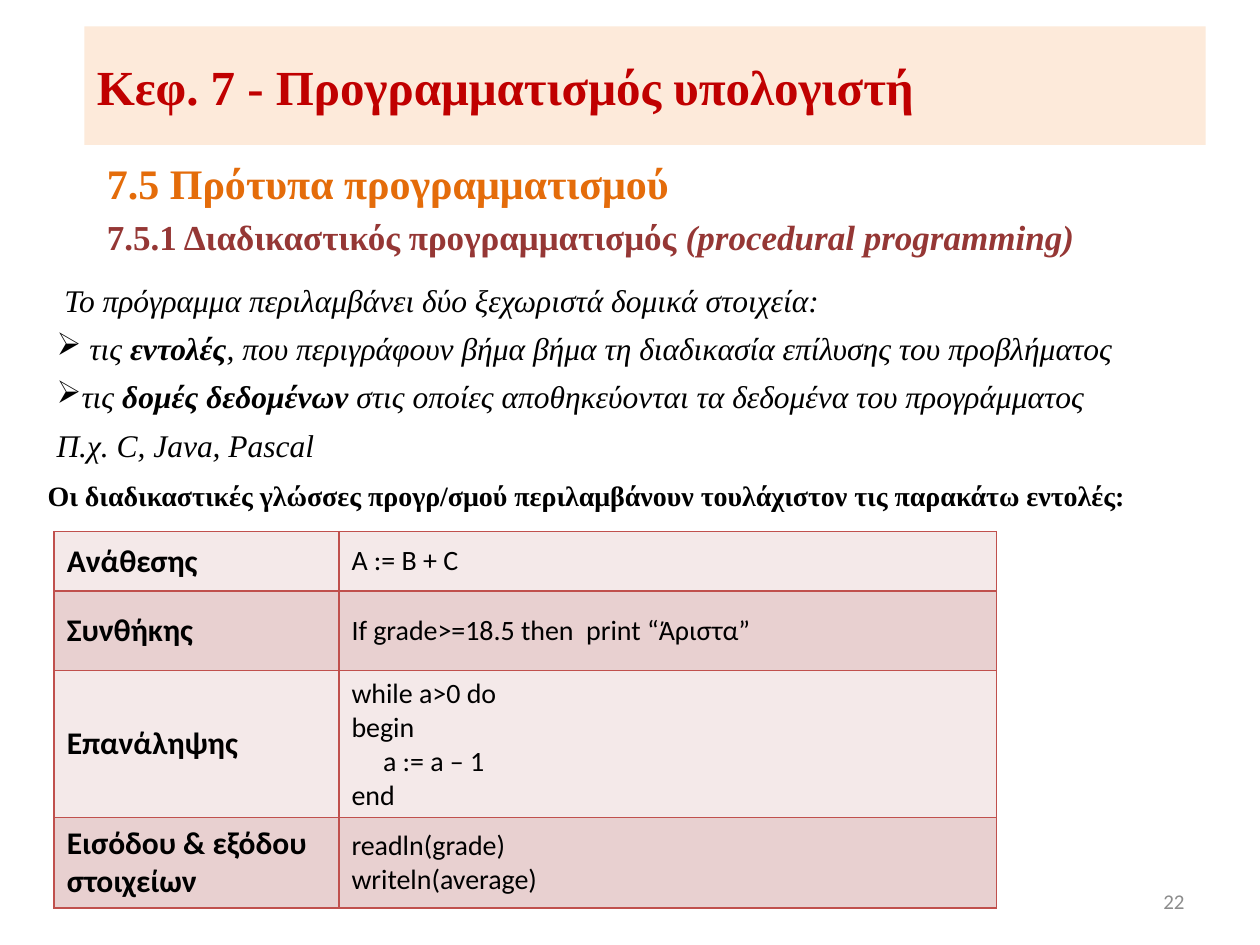
from dataclasses import dataclass

from lxml.etree import SubElement
from pptx import Presentation
from pptx.dml.color import RGBColor
from pptx.enum.shapes import MSO_SHAPE
from pptx.enum.text import MSO_ANCHOR, PP_ALIGN
from pptx.oxml.ns import qn
from pptx.util import Inches, Pt


@dataclass(frozen=True)
class Theme:
    serif: str = "Times New Roman"
    sans: str = "Calibri"
    black: str = "000000"
    title: str = "C00000"
    title_fill: str = "FDEADA"
    section: str = "E46C0A"
    subsection: str = "953735"
    number: str = "8C8C8C"
    border: str = "C0504D"
    bands: tuple = ("F4E9E9", "E8D0D0")
    title_size: int = 28
    section_size: int = 24
    subsection_size: int = 20
    body_size: int = 18
    code_size: int = 16
    number_size: int = 12


@dataclass(frozen=True)
class Span:
    text: str
    bold: bool = False
    italic: bool = False


@dataclass(frozen=True)
class Para:
    spans: tuple
    bullet: str = ""


@dataclass(frozen=True)
class Style:
    size: int
    color: str
    font: str
    after: int = 0
    align: PP_ALIGN = PP_ALIGN.LEFT


@dataclass(frozen=True)
class Block:
    area: tuple  # left, top, width, height in inches
    paras: tuple
    style: Style
    anchor: MSO_ANCHOR = MSO_ANCHOR.TOP
    top_inset: float = 0.05


@dataclass(frozen=True)
class Command:
    name: str
    code: tuple
    height: float


THEME = Theme()


def write(frame, paras: tuple, style: Style) -> None:
    frame.word_wrap = True
    for index, item in enumerate(paras):
        para = frame.paragraphs[0] if index == 0 else frame.add_paragraph()
        para.alignment = style.align
        para.space_after = Pt(style.after)
        if item.bullet:
            SubElement(para._p.get_or_add_pPr(), qn("a:buChar"), char=item.bullet)
        for span in item.spans:
            run = para.add_run()
            run.text = span.text
            run.font.name = style.font
            run.font.size = Pt(style.size)
            run.font.bold = span.bold
            run.font.italic = span.italic
            run.font.color.rgb = RGBColor.from_string(style.color)


def add_block(page, block: Block) -> None:
    box = page.shapes.add_textbox(*map(Inches, block.area))
    box.text_frame.vertical_anchor = block.anchor
    box.text_frame.margin_top = Inches(block.top_inset)
    write(box.text_frame, block.paras, block.style)


def add_title(page, text: str) -> None:
    bar = page.shapes.add_shape(
        MSO_SHAPE.RECTANGLE, *map(Inches, (0.67, 0.21, 8.9, 0.94)))
    bar.shadow.inherit = False
    bar.fill.solid()
    bar.fill.fore_color.rgb = RGBColor.from_string(THEME.title_fill)
    bar.line.fill.background()
    bar.text_frame.vertical_anchor = MSO_ANCHOR.MIDDLE
    write(bar.text_frame, (Para((Span(text, bold=True),)),),
          Style(THEME.title_size, THEME.title, THEME.serif))


def paint_cell(cell, fill: str) -> None:
    properties = cell._tc.get_or_add_tcPr()
    for side in ("lnL", "lnR", "lnT", "lnB"):
        line = SubElement(properties, qn(f"a:{side}"), w=str(Pt(1)))
        solid = SubElement(line, qn("a:solidFill"))
        SubElement(solid, qn("a:srgbClr"), val=THEME.border)
    cell.fill.solid()
    cell.fill.fore_color.rgb = RGBColor.from_string(fill)
    cell.vertical_anchor = MSO_ANCHOR.MIDDLE


def add_commands(page, commands: tuple) -> None:
    widths = (2.26, 5.22)
    height = sum(command.height for command in commands)
    table = page.shapes.add_table(
        len(commands), len(widths),
        *map(Inches, (0.43, 4.22, sum(widths), height))).table
    table.first_row = table.horz_banding = False
    for column, width in zip(table.columns, widths):
        column.width = Inches(width)
    name_style = Style(THEME.body_size, THEME.black, THEME.sans)
    code_style = Style(THEME.code_size, THEME.black, THEME.sans)
    for index, command in enumerate(commands):
        table.rows[index].height = Inches(command.height)
        name_cell, code_cell = table.cell(index, 0), table.cell(index, 1)
        for cell in (name_cell, code_cell):
            paint_cell(cell, THEME.bands[index % 2])
        write(name_cell.text_frame,
              (Para((Span(command.name, bold=True),)),), name_style)
        write(code_cell.text_frame,
              tuple(Para((Span(line),)) for line in command.code), code_style)


BLOCKS = (
    # Section and subsection headings
    Block((0.75, 1.15, 7, 0.55),
          (Para((Span("7.5 Πρότυπα προγραμματισμού", bold=True),)),),
          Style(THEME.section_size, THEME.section, THEME.serif), top_inset=0.1),
    Block((0.75, 1.62, 8.9, 0.55),
          (Para((Span("7.5.1 Διαδικαστικός προγραμματισμός ", bold=True),
                 Span("(procedural programming)", bold=True, italic=True))),),
          Style(THEME.subsection_size, THEME.subsection, THEME.serif), top_inset=0.09),
    # Structural elements of a program
    Block((0.35, 2.18, 9.45, 1.57), (
        Para((Span(" Το πρόγραμμα περιλαμβάνει δύο ξεχωριστά δομικά στοιχεία:",
                   italic=True),)),
        Para((Span(" τις", italic=True), Span(" εντολές", True, True),
              Span(", που περιγράφουν βήμα βήμα τη διαδικασία επίλυσης του "
                   "προβλήματος", italic=True)), "➢"),
        Para((Span("τις ", italic=True), Span("δομές δεδομένων ", True, True),
              Span("στις οποίες αποθηκεύονται τα δεδομένα του προγράμματος",
                   italic=True)), "➢"),
        Para((Span("Π.χ. C, Java, Pascal", italic=True),)),
    ), Style(THEME.body_size, THEME.black, THEME.serif, after=6)),
    # Lead-in to the table
    Block((0.28, 3.75, 9.1, 0.37),
          (Para((Span("Οι διαδικαστικές γλώσσες προγρ/σμού περιλαμβάνουν "
                      "τουλάχιστον τις παρακάτω εντολές:", bold=True),)),),
          Style(THEME.code_size, THEME.black, THEME.serif, after=6)),
    # Slide number
    Block((7.17, 6.95, 2.33, 0.4), (Para((Span("22"),)),),
          Style(THEME.number_size, THEME.number, THEME.sans, align=PP_ALIGN.RIGHT),
          MSO_ANCHOR.MIDDLE),
)

COMMANDS = (
    Command("Ανάθεσης", ("A := B + C",), 0.47),
    Command("Συνθήκης", ("If grade>=18.5 then  print “Άριστα”",), 0.63),
    Command("Επανάληψης", ("while a>0 do", "begin", "     a := a – 1", "end"), 1.16),
    Command("Εισόδου & εξόδου στοιχείων", ("readln(grade)", "writeln(average)"), 0.72),
)


def main() -> None:
    deck = Presentation()
    deck.slide_width, deck.slide_height = Inches(10), Inches(7.5)
    page = deck.slides.add_slide(deck.slide_layouts[6])
    add_title(page, "Κεφ. 7 - Προγραμματισμός υπολογιστή")
    for block in BLOCKS:
        add_block(page, block)
    add_commands(page, COMMANDS)
    deck.save("out.pptx")


if __name__ == "__main__":
    main()
